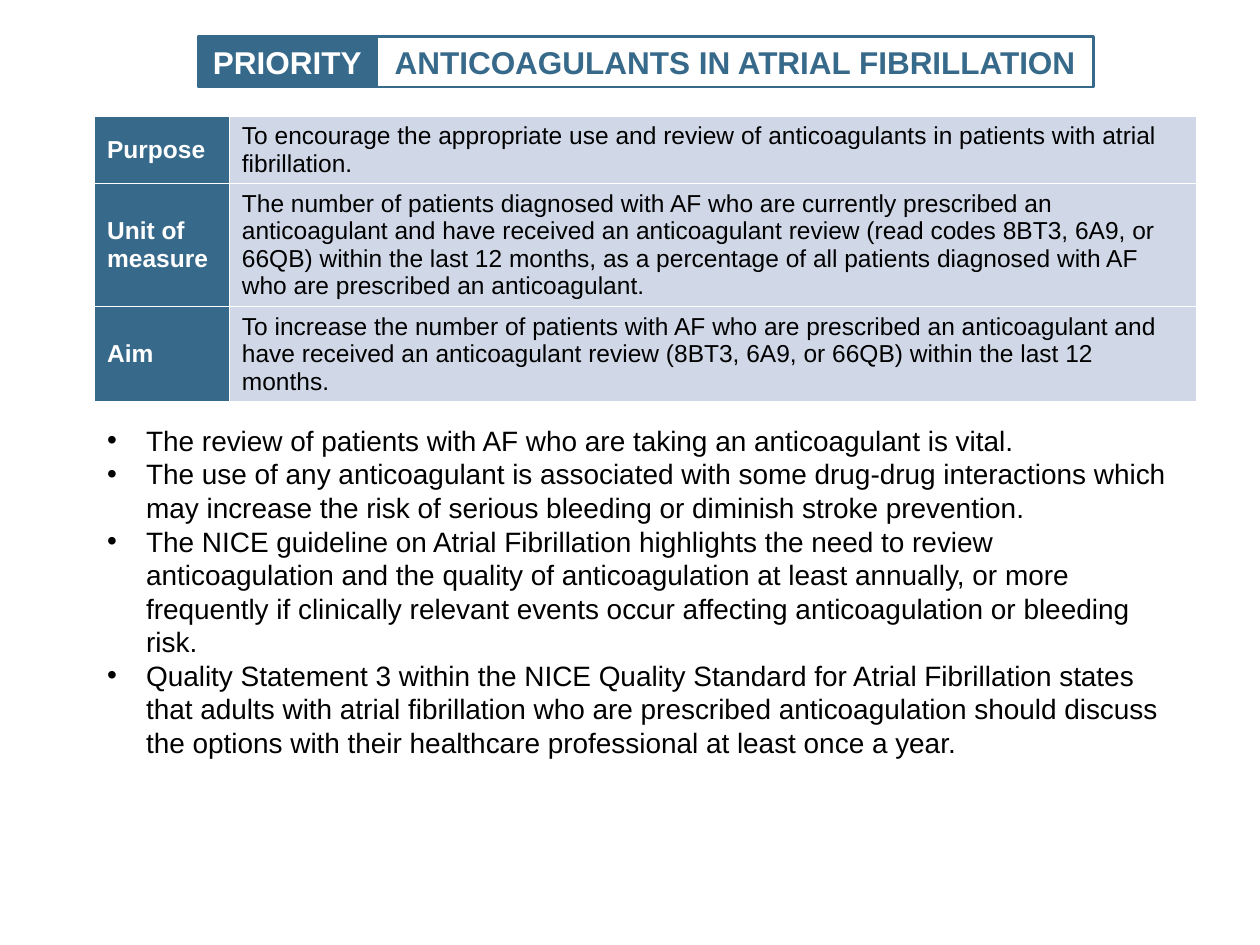
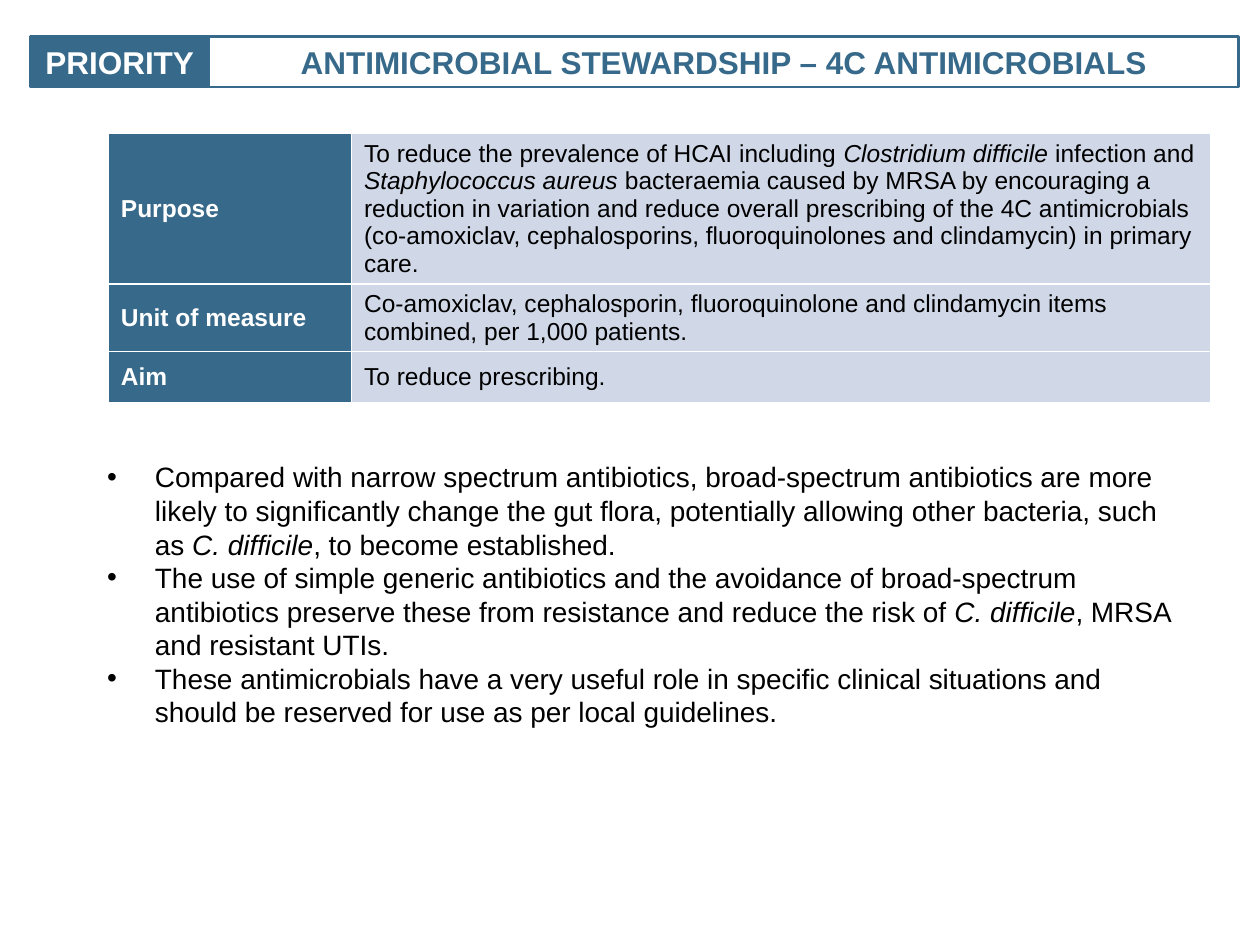
from lxml import etree
from pptx import Presentation
from pptx.dml.color import RGBColor
from pptx.enum.shapes import MSO_SHAPE
from pptx.enum.text import MSO_ANCHOR, MSO_AUTO_SIZE, PP_ALIGN
from pptx.oxml.ns import qn
from pptx.util import Inches, Pt

RECT = MSO_SHAPE.RECTANGLE
TOP, MIDDLE = MSO_ANCHOR.TOP, MSO_ANCHOR.MIDDLE
LEFT, CENTER = PP_ALIGN.LEFT, PP_ALIGN.CENTER
FIXED = MSO_AUTO_SIZE.NONE

HEX = {"blue": "37698A", "pale": "D0D8E8", "white": "FFFFFF", "black": "000000"}

# Content; asterisks enclose italic words
SLIDES = [
    {
        "title": "ANTICOAGULANTS IN ATRIAL FIBRILLATION",
        "band": (1.57, 5.69),
        "table": (0.75, 0.92),
        "cols": (1.07, 7.68),
        "rows": [
            ("Purpose", 0.53,
             "To encourage the appropriate use and review of anticoagulants in "
             "patients with atrial fibrillation."),
            ("Unit of measure", 0.97,
             "The number of patients diagnosed with AF who are currently "
             "prescribed an anticoagulant and have received an anticoagulant "
             "review (read codes 8BT3, 6A9, or 66QB) within the last 12 months, "
             "as a percentage of all patients diagnosed with AF who are "
             "prescribed an anticoagulant."),
            ("Aim", 0.75,
             "To increase the number of patients with AF who are prescribed an "
             "anticoagulant and have received an anticoagulant review (8BT3, "
             "6A9, or 66QB) within the last 12 months."),
        ],
        "list": (3.31, 3.48),
        "indent": 0.31,
        "points": [
            "The review of patients with AF who are taking an anticoagulant is "
            "vital.",
            "The use of any anticoagulant is associated with some drug-drug "
            "interactions which may increase the risk of serious bleeding or "
            "diminish stroke prevention.",
            "The NICE guideline on Atrial Fibrillation highlights the need to "
            "review anticoagulation and the quality of anticoagulation at least "
            "annually, or more frequently if clinically relevant events occur "
            "affecting anticoagulation or bleeding risk.",
            "Quality Statement 3 within the NICE Quality Standard for Atrial "
            "Fibrillation states that adults with atrial fibrillation who are "
            "prescribed anticoagulation should discuss the options with their "
            "healthcare professional at least once a year.",
        ],
    },
    {
        "title": "ANTIMICROBIAL STEWARDSHIP – 4C ANTIMICROBIALS",
        "band": (0.24, 8.17),
        "table": (0.86, 1.06),
        "cols": (1.93, 6.82),
        "rows": [
            ("Purpose", 1.19,
             "To reduce the prevalence of HCAI including *Clostridium difficile "
             "*infection and *Staphylococcus aureus *bacteraemia caused by MRSA "
             "by encouraging a reduction in variation and reduce overall "
             "prescribing of the 4C antimicrobials (co-amoxiclav, "
             "cephalosporins, fluoroquinolones and clindamycin) in primary "
             "care."),
            ("Unit of measure", 0.53,
             "Co-amoxiclav, cephalosporin, fluoroquinolone and clindamycin "
             "items combined, per 1,000 patients."),
            ("Aim", 0.41, "To reduce prescribing."),
        ],
        "list": (3.6, 2.43),
        "indent": 0.38,
        "points": [
            "Compared with narrow spectrum antibiotics, broad-spectrum "
            "antibiotics are more likely to significantly change the gut flora, "
            "potentially allowing other bacteria, such as *C. difficile*, to "
            "become established.",
            "The use of simple generic antibiotics and the avoidance of "
            "broad-spectrum antibiotics preserve these from resistance and "
            "reduce the risk of *C. difficile*, MRSA and resistant UTIs.",
            "These antimicrobials have a very useful role in specific clinical "
            "situations and should be reserved for use as per local "
            "guidelines.",
        ],
    },
]

# Shared measures and text styles
BAND_TOP, BAND_H, TAG_W = 0.29, 0.4, 1.42
LIST_X, LIST_W = 0.75, 8.75
HEAD = {"size": Pt(18), "bold": True}
LABEL = {"size": Pt(14), "bold": True}
CELL = {"size": Pt(14), "bold": False}
POINT = {"size": Pt(16), "bold": False}


def rgb(name):
    return RGBColor.from_string(HEX[name])


def paint(part, name):
    part.fill.solid()
    part.fill.fore_color.rgb = rgb(name)


def place(shape, *box):
    for key, size in zip(("left", "top", "width", "height"), box):
        setattr(shape, key, Inches(size))


def write(para, text, style, color):
    for num, part in enumerate(text.split("*")):
        if part:
            run = para.add_run()
            run.text = part
            look = {"name": "Arial", "italic": num % 2 == 1, **style}
            for key, value in look.items():
                setattr(run.font, key, value)
            run.font.color.rgb = rgb(color)


def set_frame(frame, anchor):
    look = {"word_wrap": True, "auto_size": FIXED, "vertical_anchor": anchor}
    for key, value in look.items():
        setattr(frame, key, value)


def add_band(slide, title, left, width):
    """Filled tag followed by the outlined title."""
    tag = slide.shapes.add_shape(RECT, 0, 0, 0, 0)
    tag.shadow.inherit = False
    paint(tag, "blue")
    name = slide.shapes.title
    name.fill.background()
    parts = [(tag, left, TAG_W, "PRIORITY", "white"),
             (name, left + TAG_W, width, title, "blue")]
    for shape, x, wide, text, color in parts:
        place(shape, x, BAND_TOP, wide, BAND_H)
        shape.line.color.rgb = rgb("blue")
        shape.line.width = Pt(1.5)
        set_frame(shape.text_frame, MIDDLE)
        para = shape.text_frame.paragraphs[0]
        para.alignment = CENTER
        write(para, text, HEAD, color)


def add_edges(cell):
    """White 1 pt border on all four sides, ahead of the fill."""
    props = cell._tc.get_or_add_tcPr()
    for pos, side in enumerate(("lnL", "lnR", "lnT", "lnB")):
        line = etree.Element(qn("a:" + side), w=str(Pt(1)))
        fill = etree.SubElement(line, qn("a:solidFill"))
        etree.SubElement(fill, qn("a:srgbClr"), val=HEX["white"])
        props.insert(pos, line)


def add_grid(slide, rows, cols, left, top):
    high = sum(row[1] for row in rows)
    box = [Inches(n) for n in (left, top, sum(cols), high)]
    grid = slide.shapes.add_table(len(rows), len(cols), *box).table
    grid.first_row = grid.horz_banding = False
    for col, width in zip(grid.columns, cols):
        col.width = Inches(width)
    for r, (label, height, text) in enumerate(rows):
        grid.rows[r].height = Inches(height)
        parts = [(label, LABEL, "white", "blue"), (text, CELL, "black", "pale")]
        for c, (words, style, color, back) in enumerate(parts):
            cell = grid.cell(r, c)
            cell.vertical_anchor = MIDDLE
            paint(cell, back)
            add_edges(cell)
            write(cell.text_frame.paragraphs[0], words, style, color)


def add_list(slide, points, indent, top, height):
    body = slide.placeholders[1]
    place(body, LIST_X, top, LIST_W, height)
    frame = body.text_frame
    set_frame(frame, TOP)
    for num, text in enumerate(points):
        para = frame.add_paragraph() if num else frame.paragraphs[0]
        props = para._p.get_or_add_pPr()
        props.set("marL", str(Inches(indent)))
        props.set("indent", str(-Inches(indent)))
        etree.SubElement(props, qn("a:buFont"), typeface="Arial")
        etree.SubElement(props, qn("a:buChar"), char="•")
        para.alignment = LEFT
        para.space_before = Pt(0)
        para.line_spacing = Pt(19.2)
        write(para, text, POINT, "black")


def main():
    deck = Presentation()
    deck.slide_width, deck.slide_height = Inches(10), Inches(7.5)
    for data in SLIDES:
        slide = deck.slides.add_slide(deck.slide_layouts[0])
        add_list(slide, data["points"], data["indent"], *data["list"])
        add_grid(slide, data["rows"], data["cols"], *data["table"])
        add_band(slide, data["title"], *data["band"])
    deck.save("out.pptx")


if __name__ == "__main__":
    main()
